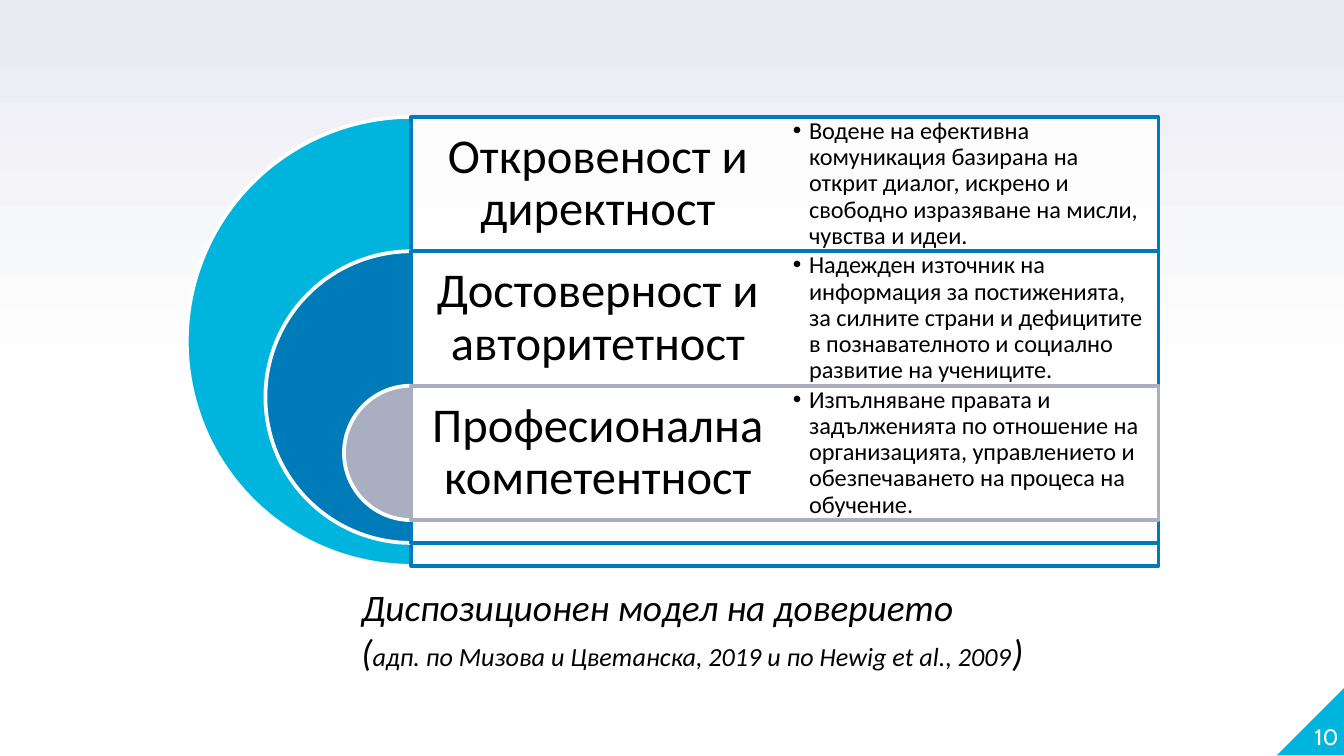
from copy import deepcopy
from dataclasses import dataclass

from lxml import etree
from pptx import Presentation
from pptx.dml.color import RGBColor
from pptx.enum.shapes import MSO_SHAPE
from pptx.enum.text import MSO_ANCHOR, MSO_AUTO_SIZE, PP_ALIGN
from pptx.oxml.ns import qn
from pptx.util import Inches, Pt

PIE = MSO_SHAPE.PIE
RECTANGLE = MSO_SHAPE.RECTANGLE
RIGHT_TRIANGLE = MSO_SHAPE.RIGHT_TRIANGLE
MIDDLE = MSO_ANCHOR.MIDDLE
BOTTOM = MSO_ANCHOR.BOTTOM
LEFT = PP_ALIGN.LEFT
CENTER = PP_ALIGN.CENTER
RIGHT = PP_ALIGN.RIGHT
FIT_TEXT = MSO_AUTO_SIZE.SHAPE_TO_FIT_TEXT

SLIDE_WIDTH = 10
SLIDE_HEIGHT = SLIDE_WIDTH * 9 / 16
GRID_LEFT, GRID_TOP = 3.06, 0.87
COLUMN_WIDTH, ROW_HEIGHT = 2.78, 1
BAND_STEP = 1.17
HALF_PIE = (54, 162)
INDENT = 0.12
SIDES = ("left", "top", "right", "bottom")
NUMBER_INSETS = (0, 0, 0, 0)
CAPTION_INSETS = (0.1, 0.05, 0.1, 0.05)
TITLE_INSETS = (0.11, 0.11, 0.11, 0.11)
DETAIL_INSETS = (0.06, 0.05, 0.08, 0.05)

COLORS = {
    "cyan": "00B5DD",
    "blue": "007BB9",
    "gray": "A9AEC0",
    "white": "FFFFFF",
    "black": "000000",
    "haze": "E9EAF2",
}


@dataclass(frozen=True)
class Box:
    left: float
    top: float
    width: float
    height: float

    def emu(self) -> list:
        return [Inches(n) for n in (self.left, self.top, self.width, self.height)]


@dataclass(frozen=True)
class Run:
    text: str
    size: int
    font: str = "Calibri"
    color: str = "black"
    italic: bool = False


@dataclass(frozen=True)
class Band:
    pie_color: str
    frame_color: str
    title: str
    detail: str


BANDS = [
    Band("cyan", "blue", "Откровеност и директност",
         "Водене на ефективна комуникация базирана на открит диалог, искрено и "
         "свободно изразяване на мисли, чувства и идеи."),
    Band("blue", "blue", "Достоверност и авторитетност",
         "Надежден източник на информация за постиженията, за силните страни и "
         "дефицитите в познавателното и социално развитие на учениците."),
    Band("gray", "gray", "Професионална компетентност",
         "Изпълняване правата и задълженията по отношение на организацията, "
         "управлението и обезпечаването на процеса на обучение."),
]

CAPTION = [
    [Run("Диспозиционен модел на доверието", 20, italic=True)],
    [Run("(", 20, italic=True),
     Run("адп. по Мизова и Цветанска, 2019 и по Hewig et al., 2009", 14, italic=True),
     Run(")", 20, italic=True)],
]


def rgb(name: str) -> RGBColor:
    return RGBColor.from_string(COLORS[name])


def cell(column: int, row: int) -> Box:
    return Box(GRID_LEFT + column * COLUMN_WIDTH, GRID_TOP + row * ROW_HEIGHT,
               COLUMN_WIDTH, ROW_HEIGHT)


def paint_background(slide) -> None:
    fill = slide.background.fill
    fill.gradient()
    fill.gradient_angle = 90
    for stop, color in zip(fill.gradient_stops, ("white", "haze")):
        stop.color.rgb = rgb(color)
    stops = next(slide.element.iter(qn("a:gsLst")))
    middle = deepcopy(stops[0])
    middle.set("pos", "50000")
    stops.insert(1, middle)


def add_figure(slide, kind, box: Box, fill: str, line: str | None = None):
    shape = slide.shapes.add_shape(kind, *box.emu())
    shape.shadow.inherit = False
    shape.fill.solid()
    shape.fill.fore_color.rgb = rgb(fill)
    if line:
        shape.line.color.rgb = rgb(line)
        shape.line.width = Pt(2)
    else:
        shape.line.fill.background()
    return shape


def add_text(slide, box: Box, lines: list[list[Run]], insets: tuple,
             frame_format: dict, paragraph_format: dict):
    shape = slide.shapes.add_textbox(*box.emu())
    frame = shape.text_frame
    frame.word_wrap = True
    for name, value in frame_format.items():
        setattr(frame, name, value)
    for side, inset in zip(SIDES, insets):
        setattr(frame, f"margin_{side}", Inches(inset))
    for index, runs in enumerate(lines):
        paragraph = frame.add_paragraph() if index else frame.paragraphs[0]
        for name, value in paragraph_format.items():
            setattr(paragraph, name, value)
        for item in runs:
            run = paragraph.add_run()
            run.text = item.text
            run.font.color.rgb = rgb(item.color)
            font_format = {"name": item.font, "size": Pt(item.size), "italic": item.italic}
            for name, value in font_format.items():
                setattr(run.font, name, value)
    return shape


def add_bullet(paragraph) -> None:
    properties = paragraph._p.get_or_add_pPr()
    properties.set("marL", str(Inches(INDENT)))
    properties.set("indent", str(-Inches(INDENT)))
    etree.SubElement(properties, qn("a:buFont")).set("typeface", "Arial")
    etree.SubElement(properties, qn("a:buChar")).set("char", "•")


def add_band(slide, row: int, band: Band) -> None:
    title_cell = cell(0, row)
    height = ROW_HEIGHT + BAND_STEP * (len(BANDS) - 1 - row)
    pie_box = Box(GRID_LEFT - height / 2, title_cell.top, height, height)
    pie = add_figure(slide, PIE, pie_box, band.pie_color, "white")
    for index, angle in enumerate(HALF_PIE):
        pie.adjustments[index] = angle
    frame_box = Box(GRID_LEFT, title_cell.top, 2 * COLUMN_WIDTH, height)
    frame = add_figure(slide, RECTANGLE, frame_box, "white", band.frame_color)
    color = frame.element.spPr.find(qn("a:solidFill"))[0]
    etree.SubElement(color, qn("a:alpha")).set("val", "90000")
    add_text(slide, title_cell, [[Run(band.title, 26)]], TITLE_INSETS,
             {"vertical_anchor": MIDDLE}, {"alignment": CENTER, "line_spacing": 0.9})


def add_detail(slide, row: int, band: Band) -> None:
    shape = add_text(slide, cell(1, row), [[Run(band.detail, 13)]], DETAIL_INSETS,
                     {"vertical_anchor": MIDDLE},
                     {"alignment": LEFT, "line_spacing": 0.9})
    add_bullet(shape.text_frame.paragraphs[0])


def main() -> None:
    presentation = Presentation()
    presentation.slide_width = Inches(SLIDE_WIDTH)
    presentation.slide_height = Inches(SLIDE_HEIGHT)
    slide = presentation.slides.add_slide(presentation.slide_layouts[6])
    paint_background(slide)

    corner = add_figure(slide, RIGHT_TRIANGLE, Box(9.5, 5.11, 0.51, 0.51), "cyan")
    corner.element.spPr.find(qn("a:xfrm")).set("flipH", "1")
    add_text(slide, Box(9.46, 5.07, 0.5, 0.51), [[Run("10", 12, "Cabin", "white")]],
             NUMBER_INSETS, {"vertical_anchor": BOTTOM}, {"alignment": RIGHT})
    add_text(slide, Box(2.59, 4.3, 5.8, 0.77), CAPTION, CAPTION_INSETS,
             {"auto_size": FIT_TEXT}, {"alignment": LEFT})

    for draw in (add_band, add_detail):
        for row, band in enumerate(BANDS):
            draw(slide, row, band)
    presentation.save("out.pptx")


if __name__ == "__main__":
    main()
